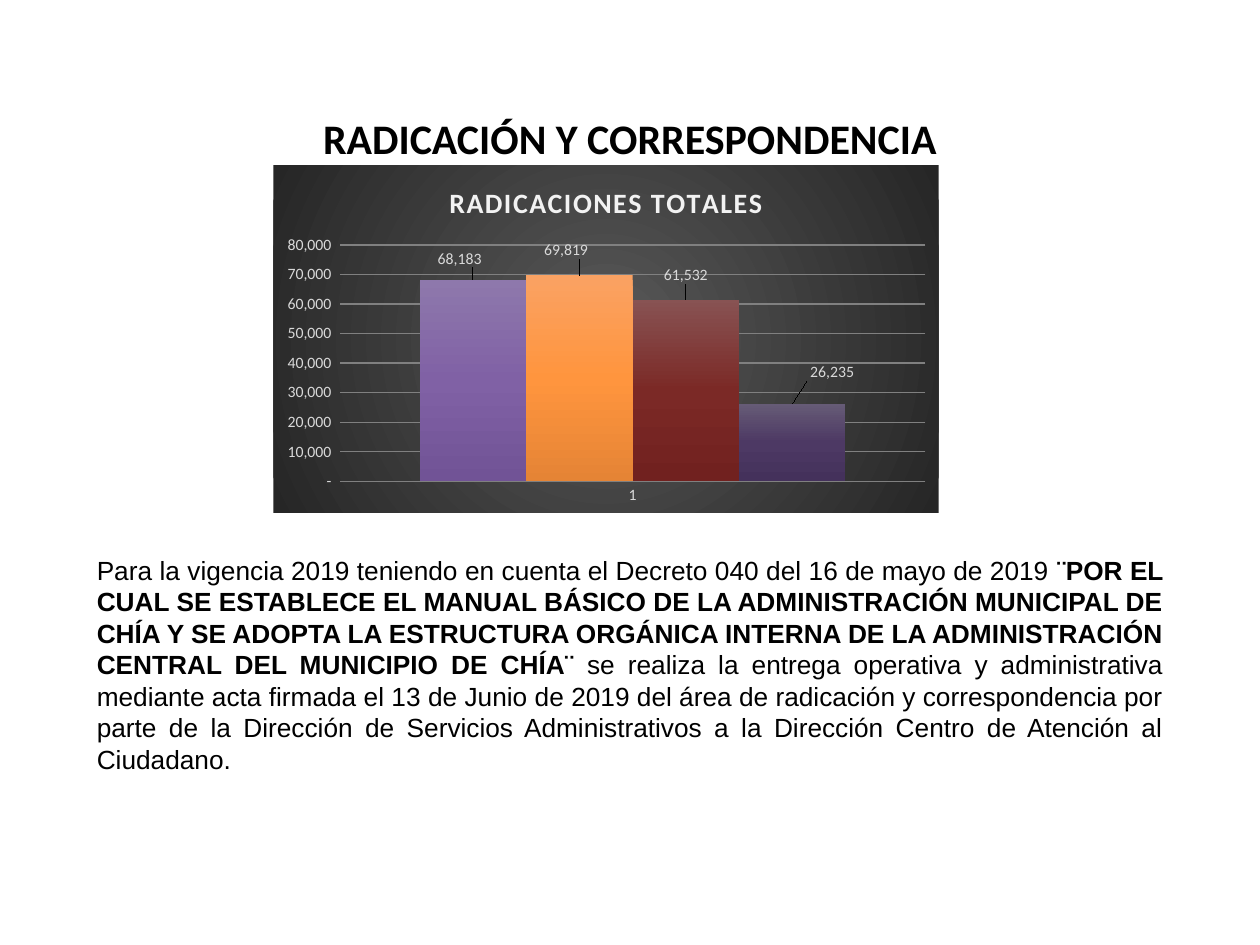
from lxml.etree import SubElement
from pptx import Presentation
from pptx.chart.data import CategoryChartData
from pptx.dml.color import RGBColor
from pptx.enum.chart import XL_CHART_TYPE as ChartType, XL_LABEL_POSITION as LabelPosition
from pptx.enum.chart import XL_TICK_MARK as TickMark
from pptx.enum.text import MSO_AUTO_SIZE as AutoSize, PP_ALIGN as Align
from pptx.oxml import parse_xml
from pptx.oxml.ns import nsdecls, qn
from pptx.util import Inches, Pt

NUMBER_FORMAT = '_(* #,##0_);_(* \\(#,##0\\);_(* "-"_);_(@_)'
LINEAR = '<a:lin ang="5400000" scaled="0"/>'
CIRCLE = '<a:path path="circle"><a:fillToRect l="50000" t="50000" r="50000" b="50000"/></a:path>'
SERIES = [
    (68183, ("8E78AC", "8061A5", "715396"), (-0.02, -0.02)),
    (69819, ("FAA263", "FF953E", "E58435"), (-0.02, -0.03)),
    (61532, ("885353", "7B2926", "71211F"), (0, -0.03)),
    (26235, ("665B76", "4D3964", "44315B"), (0.06, -0.05)),
]


def color(value):
    return RGBColor.from_string(value)


def gradient(stops, shade):
    step = 100000 // (len(stops) - 1)
    marks = "".join(f'<a:gs pos="{i * step}"><a:srgbClr val="{stop}"/></a:gs>'
                    for i, stop in enumerate(stops))
    return parse_xml(f'<a:gradFill {nsdecls("a")} rotWithShape="1">'
                     f'<a:gsLst>{marks}</a:gsLst>{shade}</a:gradFill>')


def layout(**values):
    element = parse_xml(f'<c:layout {nsdecls("c")}><c:manualLayout/></c:layout>')
    for name, value in values.items():
        SubElement(element[0], qn(f"c:{name}")).set("val", str(value))
    return element


class SlideBuilder:
    """Hold the style and current page, and add each kind of element to it."""

    heading_font = "Calibri"
    body_font = "Arial"
    ink = "000000"
    chart_ink = "D9D9D9"

    def __init__(self, page):
        self.page = page

    def style(self, font, name, size, ink, bold=None):
        font.name, font.size, font.bold = name, Pt(size), bold
        font.color.rgb = color(ink)

    def text(self, place, spans, font, size, align):
        box = self.page.shapes.add_textbox(*map(Inches, place))
        frame = box.text_frame
        frame.word_wrap = True
        frame.auto_size = AutoSize.NONE
        para = frame.paragraphs[0]
        para.alignment = align
        self.style(para.font, font, size, self.ink)
        for words, bold in spans:
            span = para.add_run()
            span.text = words
            span.font.bold = bold

    def chart(self, place, title):
        data = CategoryChartData(number_format=NUMBER_FORMAT)
        data.categories = ["1"]
        for number, (value, _, _) in enumerate(SERIES, 1):
            data.add_series(f"Series {number}", [value])
        chart = self.page.shapes.add_chart(
            ChartType.COLUMN_CLUSTERED, *map(Inches, place), data).chart
        self.style(chart.font, self.heading_font, 10, self.ink)
        chart.has_legend = False
        self.chart_title(chart, title)
        self.chart_area(chart)
        self.axes(chart)
        plot = chart.plots[0]
        plot.gap_width, plot.overlap, plot.vary_by_categories = 150, 0, False
        for series, (_, stops, shift) in zip(plot.series, SERIES):
            self.column(series, stops, shift)

    def chart_title(self, chart, title):
        chart.has_title = True
        chart.chart_title.include_in_layout = False
        span = chart.chart_title.text_frame.paragraphs[0].add_run()
        span.text = title
        self.style(span.font, self.heading_font, 16, "F2F2F2", True)
        span.font._element.set("spc", "100")

    def chart_area(self, chart):
        area = parse_xml(f'<c:spPr {nsdecls("c", "a")}><a:ln><a:noFill/></a:ln></c:spPr>')
        area.insert(0, gradient(("595959", "262626"), CIRCLE))
        frame = chart._chartSpace.find(qn("c:chart"))
        frame.addnext(area)
        plot_area = frame.find(qn("c:plotArea"))
        for old in plot_area.findall(qn("c:layout")):
            plot_area.remove(old)
        plot_area.insert(0, layout(layoutTarget="inner", xMode="edge", yMode="edge",
                                   x=0.1, y=0.23, w=0.88, h=0.68))

    def axes(self, chart):
        for axis in (chart.category_axis, chart.value_axis):
            axis.major_tick_mark = axis.minor_tick_mark = TickMark.NONE
            axis.format.line.fill.background()
            self.style(axis.tick_labels.font, self.heading_font, 9, self.chart_ink)
        scale = chart.value_axis
        scale.minimum_scale, scale.maximum_scale, scale.major_unit = 0, 80000, 10000
        scale.tick_labels.number_format = NUMBER_FORMAT
        scale.tick_labels.number_format_is_linked = False
        grid = scale.major_gridlines.format.line
        grid.width = Pt(0.75)
        grid.color.rgb = color("808080")

    def column(self, series, stops, shift):
        series._element.get_or_add_spPr().insert(0, gradient(stops, LINEAR))
        labels = series.data_labels
        labels.show_value = True
        labels.number_format = NUMBER_FORMAT
        labels.number_format_is_linked = False
        self.style(labels.font, self.heading_font, 9, self.chart_ink)
        label = series.points[0].data_label
        self.style(label.font, self.heading_font, 9, self.chart_ink)
        label.position = LabelPosition.OUTSIDE_END
        label._get_or_add_dLbl().insert(1, layout(x=shift[0], y=shift[1]))


def main():
    deck = Presentation()
    deck.slide_width, deck.slide_height = Inches(10), Inches(7.5)
    slide = SlideBuilder(deck.slides.add_slide(deck.slide_layouts[6]))
    slide.text((0.5, 0.84, 9, 4.95), [("RADICACIÓN Y CORRESPONDENCIA", True)],
               slide.heading_font, 24, Align.CENTER)
    slide.chart((2.17, 1.31, 5.28, 2.76), "RADICACIONES TOTALES")
    slide.text((0.67, 4.35, 8.66, 1.87), [
        ("Para la vigencia 2019 teniendo en cuenta el Decreto 040 del 16 de mayo de 2019 ", None),
        ("¨POR EL CUAL SE ESTABLECE EL MANUAL BÁSICO DE LA ADMINISTRACIÓN MUNICIPAL DE CHÍA "
         "Y SE ADOPTA LA ESTRUCTURA ORGÁNICA INTERNA DE LA ADMINISTRACIÓN CENTRAL DEL "
         "MUNICIPIO DE CHÍA¨", True),
        (" se realiza la entrega operativa y administrativa mediante acta firmada el 13 de "
         "Junio de 2019 del área de radicación y correspondencia por parte de la Dirección de "
         "Servicios Administrativos a la Dirección Centro de Atención al Ciudadano.", None),
    ], slide.body_font, 15, Align.JUSTIFY)
    deck.save("out.pptx")


if __name__ == "__main__":
    main()
